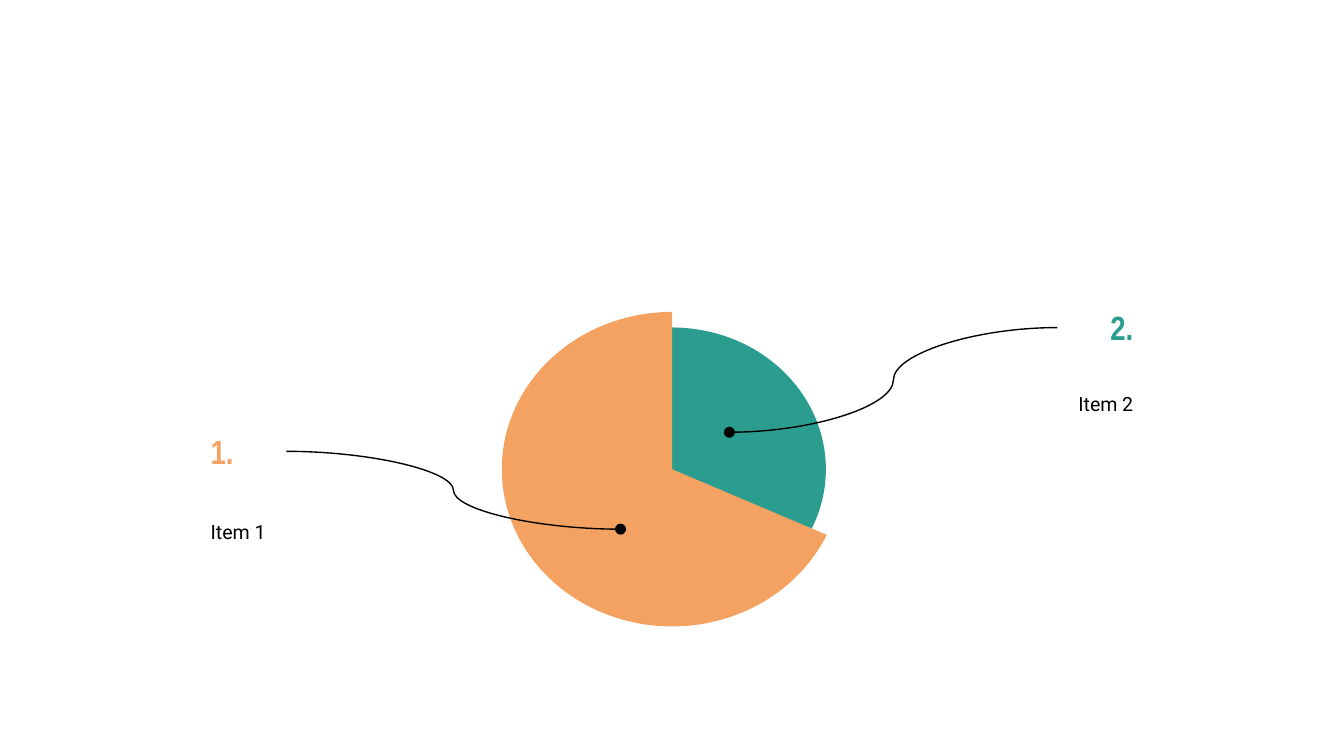
"""Build a two-part pie infographic with numbered callouts."""
from dataclasses import dataclass

from lxml.etree import SubElement
from pptx import Presentation
from pptx.dml.color import RGBColor
from pptx.enum.shapes import MSO_CONNECTOR, MSO_SHAPE
from pptx.enum.text import MSO_ANCHOR, PP_ALIGN
from pptx.oxml.ns import qn
from pptx.util import Pt

TEAL, ORANGE, BLACK, WHITE = "2A9D8F", "F4A261", "000000", "FFFFFF"
CENTER_X, CENTER_Y = 360, 251.4
INSET = 7.2
NUMBER_WIDTH, NUMBER_HEIGHT = 47.5, 16.6
LABEL_WIDTH, LABEL_HEIGHT = 118.1, 63.4


@dataclass
class Sector:
    shape: MSO_SHAPE
    width: float
    height: float
    color: str
    angles: tuple = ()


@dataclass
class Callout:
    number: str
    label: str
    color: str
    edge: float
    label_top: float
    line_start: tuple
    line_end: tuple
    align: PP_ALIGN


SECTORS = [
    Sector(MSO_SHAPE.OVAL, 164.9, 151.9, TEAL),
    Sector(MSO_SHAPE.PIE, 182.4, 168.5, ORANGE, (13.8, 162)),
]
CALLOUTS = [
    Callout("1.", "Item 1", ORANGE, 105.8, 272.2,
            (153.4, 241.8), (332.4, 283.5), PP_ALIGN.LEFT),
    Callout("2.", "Item 2", TEAL, 614.2, 203.8,
            (566.5, 175.5), (390.8, 231.6), PP_ALIGN.RIGHT),
]


def paint(target, color: str) -> None:
    """Give a fill or line format a solid colour."""
    target.solid()
    target.fore_color.rgb = RGBColor.from_string(color)


def add_text(page, text: str, *, left: float, top: float, width: float, height: float,
             font: str, size: float, color: str, align: PP_ALIGN,
             anchor: MSO_ANCHOR = MSO_ANCHOR.TOP, bold: bool = False) -> None:
    """Add a wrapped text box with one formatted line."""
    box = page.shapes.add_textbox(Pt(left), Pt(top), Pt(width), Pt(height))
    frame = box.text_frame
    frame.word_wrap = True
    frame.vertical_anchor = anchor
    frame.margin_left = frame.margin_right = Pt(INSET)
    frame.margin_top = frame.margin_bottom = Pt(INSET)
    para = frame.paragraphs[0]
    para.alignment = align
    span = para.add_run()
    span.text = text
    span.font.name = font
    span.font.size = Pt(size)
    span.font.bold = bold
    span.font.color.rgb = RGBColor.from_string(color)


def add_sector(page, sector: Sector) -> None:
    """Draw a disc or pie sector around the common centre."""
    shape = page.shapes.add_shape(
        sector.shape, Pt(CENTER_X - sector.width / 2), Pt(CENTER_Y - sector.height / 2),
        Pt(sector.width), Pt(sector.height))
    for index, angle in enumerate(sector.angles):
        shape.adjustments[index] = angle
    shape.shadow.inherit = False
    paint(shape.fill, sector.color)
    shape.line.fill.background()


def add_leader(page, callout: Callout) -> None:
    """Draw a curved line that ends in a dot on its sector."""
    points = [Pt(value) for value in callout.line_start + callout.line_end]
    leader = page.shapes.add_connector(MSO_CONNECTOR.CURVE, *points)
    paint(leader.line.fill, BLACK)
    leader.line.width = Pt(0.75)
    SubElement(leader.line._get_or_add_ln(), qn("a:tailEnd"), type="oval")
    SubElement(leader._element.spPr, qn("a:effectLst"))


def add_callout(page, callout: Callout) -> None:
    """Add the leader, number and label of one callout."""
    is_right = callout.align == PP_ALIGN.RIGHT
    add_leader(page, callout)
    add_text(page, callout.label, left=callout.edge - LABEL_WIDTH * is_right,
             top=callout.label_top, width=LABEL_WIDTH, height=LABEL_HEIGHT,
             font="Roboto", size=10.5, color=BLACK, align=callout.align)
    add_text(page, callout.number, left=callout.edge - NUMBER_WIDTH * is_right,
             top=callout.line_start[1] - NUMBER_HEIGHT / 2,
             width=NUMBER_WIDTH, height=NUMBER_HEIGHT,
             font="Arial Narrow", size=18, color=callout.color, align=callout.align,
             anchor=MSO_ANCHOR.MIDDLE, bold=True)


def main() -> None:
    """Create the deck and save it."""
    deck = Presentation()
    deck.slide_width, deck.slide_height = Pt(720), Pt(405)
    page = deck.slides.add_slide(deck.slide_layouts[6])
    paint(page.background.fill, WHITE)
    for sector in SECTORS:
        add_sector(page, sector)
    for callout in CALLOUTS:
        add_callout(page, callout)
    deck.save("out.pptx")


if __name__ == "__main__":
    main()
